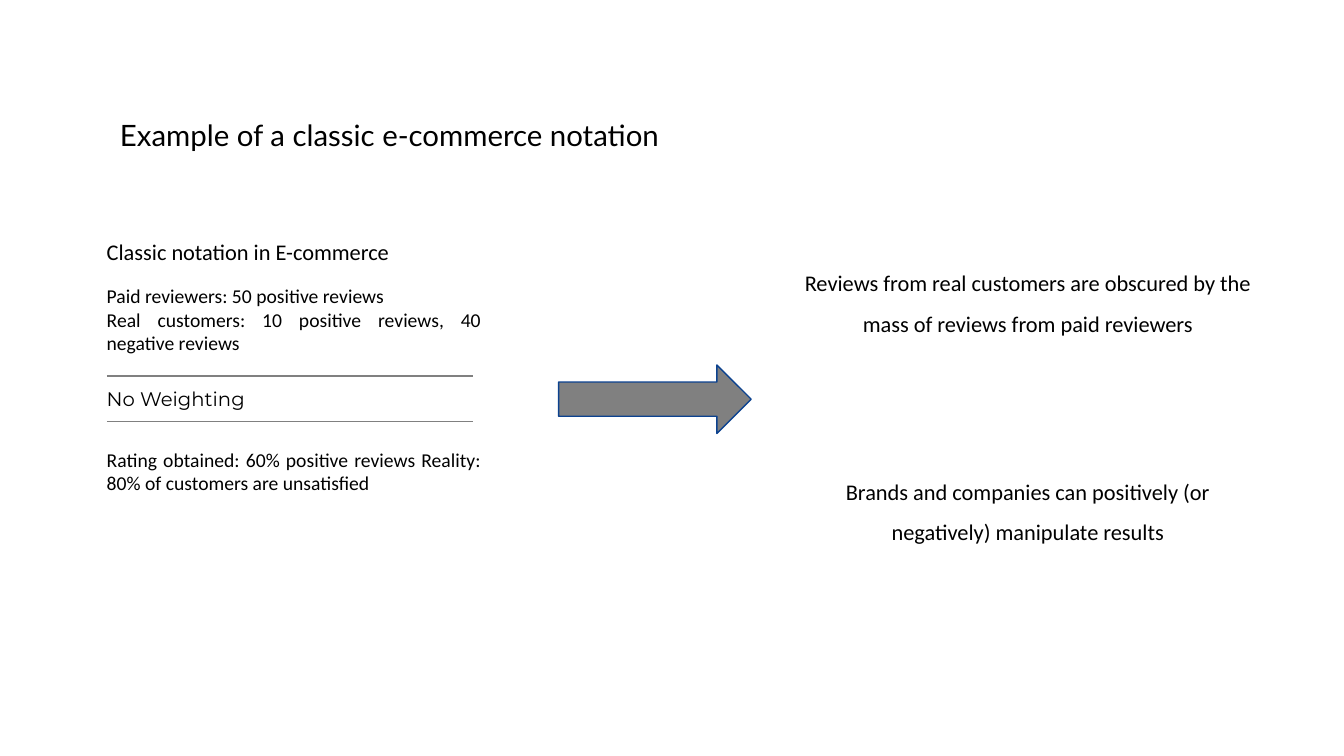
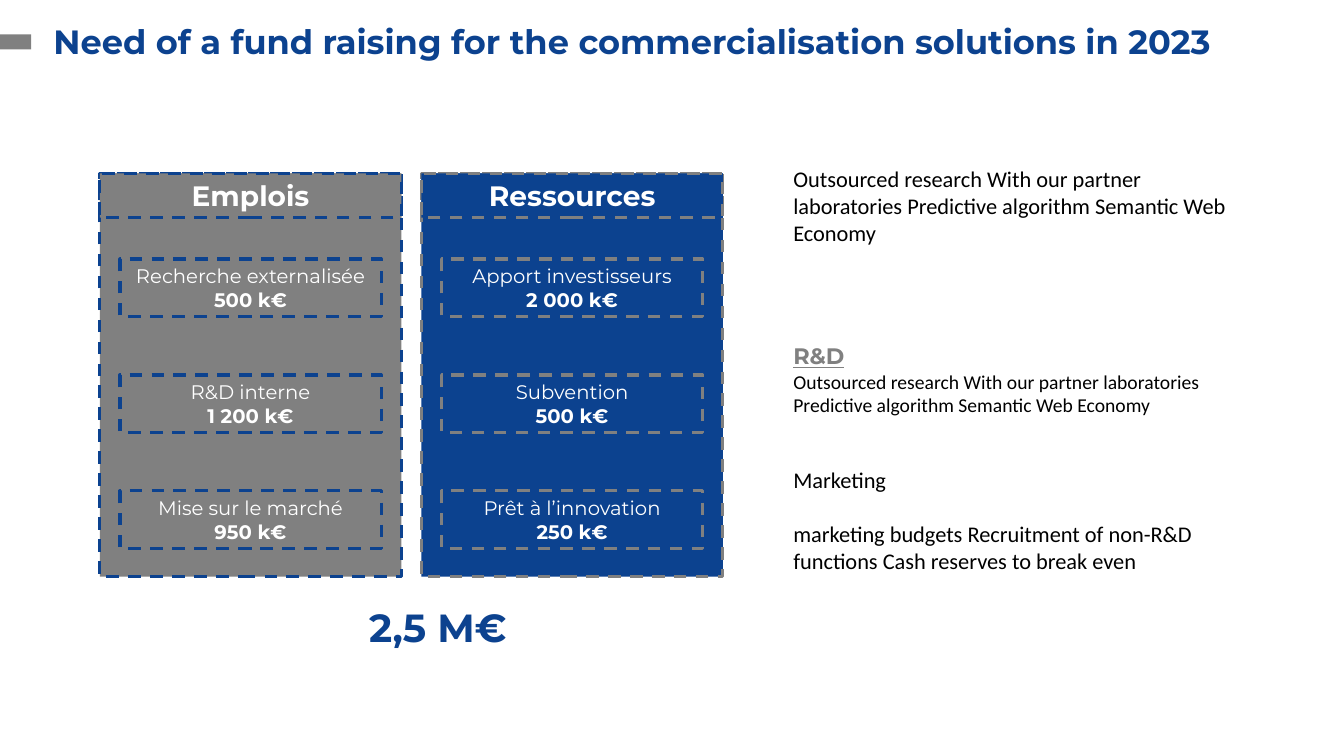
"""Build two slides: a classic e-commerce rating example and a fund-raising plan."""
from dataclasses import dataclass

from lxml import etree
from pptx import Presentation
from pptx.dml.color import RGBColor
from pptx.enum import dml, shapes, text
from pptx.oxml import ns
from pptx.util import Inches, Pt


@dataclass(frozen=True)
class Theme:
    blue: str = "0C428F"
    grey: str = "808080"
    black: str = "000000"
    white: str = "FFFFFF"
    plain: str = "Calibri"
    brand: str = "Montserrat"
    light: str = "Lato"
    small: int = 14
    body: int = 16
    header: int = 20
    lead: int = 21
    title: int = 24
    total: int = 28


@dataclass(frozen=True)
class Style:
    size: int
    font: str = Theme.plain
    color: str = Theme.black
    bold: bool = False
    underline: bool = False


THEME = Theme()
SMALL, BODY = Style(THEME.small), Style(THEME.body)
BRAND = Style(THEME.small, THEME.brand)
LEAD = Style(THEME.lead, THEME.light)
TITLE = Style(THEME.title, THEME.brand, THEME.blue, bold=True)
TOTAL = Style(THEME.total, THEME.brand, THEME.blue, bold=True)
HEADER = Style(THEME.header, THEME.brand, THEME.white, bold=True)
LABEL = Style(THEME.small, THEME.brand, THEME.white)
AMOUNT = Style(THEME.small, THEME.brand, THEME.white, bold=True)
TOPIC = Style(THEME.body, THEME.brand, THEME.grey, bold=True, underline=True)

LEFT, CENTER, JUSTIFY = text.PP_ALIGN.LEFT, text.PP_ALIGN.CENTER, text.PP_ALIGN.JUSTIFY

NOTATION_TITLE = "Example of a classic e-commerce notation"
NOTATION = [
    (2.31, 0.37, LEFT, [("Classic notation in E-commerce", BODY)]),
    (2.77, 0.81, JUSTIFY, [
        ("Paid reviewers: 50 positive reviews", SMALL),
        ("Real customers: 10 positive reviews, 40 negative reviews", SMALL)]),
    (3.79, 0.34, JUSTIFY, [("No Weighting", BRAND)]),
    (4.39, 0.57, JUSTIFY, [
        ("Rating obtained: 60% positive reviews Reality: 80% of customers are unsatisfied",
         SMALL)]),
]
RULES = (3.73, 4.18)
CONSEQUENCES = [
    (2.49, "Reviews from real customers are obscured by the mass of reviews from paid reviewers"),
    (4.56, "Brands and companies can positively (or negatively) manipulate results"),
]

FUNDING_TITLE = "Need of a fund raising for the commercialisation solutions in 2023"
FUNDING = [
    ("Emplois", THEME.grey, THEME.blue, [
        ("Recherche externalisée", "500 k€"),
        ("R&D interne", "1 200 k€"),
        ("Mise sur le marché", "950 k€")]),
    ("Ressources", THEME.blue, THEME.grey, [
        ("Apport investisseurs", "2 000 k€"),
        ("Subvention", "500 k€"),
        ("Prêt à l’innovation", "250 k€")]),
]
FUNDING_TOTAL = "2,5 M€"
RESEARCH = ("Outsourced research With our partner laboratories "
            "Predictive algorithm Semantic Web Economy")
USES = [
    (1.59, 4.53, 0.91, 0, [(RESEARCH, BODY)]),
    (3.35, 4.53, 0.84, 0, [("R&D", TOPIC), (RESEARCH, SMALL)]),
    (4.57, 4.85, 1.18, 19.5, [
        ("Marketing", BODY),
        ("marketing budgets Recruitment of non-R&D functions Cash reserves to break even",
         BODY)]),
]


def rgb(color):
    return RGBColor.from_string(color)


def inches(box):
    return [Inches(length) for length in box]


def write(frame, lines, align=LEFT, spacing=None, gap=0):
    frame.word_wrap = True
    frame.text = "\n".join(line for line, _ in lines)
    for paragraph, (_, style) in zip(frame.paragraphs, lines):
        paragraph.alignment = align
        paragraph.space_before = Pt(0)
        paragraph.space_after = Pt(gap)
        if spacing:
            paragraph.line_spacing = spacing
        for run in paragraph.runs:
            font = run.font
            font.size, font.name = Pt(style.size), style.font
            font.bold, font.underline = style.bold, style.underline
            font.color.rgb = rgb(style.color)


def add_text(slide, box, lines, **layout):
    write(slide.shapes.add_textbox(*inches(box)).text_frame, lines, **layout)


def add_block(slide, box, fill, line=None, width=1, dashed=False, lines=(),
              kind=shapes.MSO_SHAPE.RECTANGLE):
    block = slide.shapes.add_shape(kind, *inches(box))
    block.shadow.inherit = False
    block.fill.solid()
    block.fill.fore_color.rgb = rgb(fill)
    if line:
        block.line.color.rgb = rgb(line)
        block.line.width = Pt(width)
        if dashed:
            block.line.dash_style = dml.MSO_LINE.DASH
    else:
        block.line.fill.background()
    if lines:
        write(block.text_frame, lines, align=CENTER)


def add_rule(slide, left, right, top):
    rule = slide.shapes.add_connector(
        shapes.MSO_CONNECTOR.STRAIGHT, *inches((left, top, right, top)))
    rule.line.color.rgb = rgb(THEME.grey)
    rule.line.width = Pt(1)
    etree.SubElement(rule._element.spPr, ns.qn("a:effectLst"))


def add_slide(deck, heading, style, box):
    slide = deck.slides.add_slide(deck.slide_layouts[5])
    title = slide.shapes.title
    title.left, title.top, title.width, title.height = inches(box)
    write(title.text_frame, [(heading, style)])
    title.text_frame.auto_size = text.MSO_AUTO_SIZE.NONE
    title.text_frame.vertical_anchor = text.MSO_ANCHOR.MIDDLE
    return slide


def build_notation(deck):
    slide = add_slide(deck, NOTATION_TITLE, LEAD, (1.09, 1.09, 11, 0.5))
    for top, height, align, lines in NOTATION:
        add_text(slide, (0.96, top, 3.91, height), lines, align=align)
    for top in RULES:
        add_rule(slide, 1.06, 4.69, top)
    add_block(slide, (5.54, 3.62, 1.91, 0.68), THEME.grey, THEME.blue,
              kind=shapes.MSO_SHAPE.RIGHT_ARROW)
    for top, consequence in CONSEQUENCES:
        add_text(slide, (7.86, top, 4.67, 0.87), [(consequence, BODY)],
                 align=CENTER, spacing=1.5)


def build_funding(deck):
    slide = add_slide(deck, FUNDING_TITLE, TITLE, (0.43, 0.16, 12.38, 0.5))
    add_block(slide, (0, 0.34, 0.31, 0.15), THEME.grey)
    top, width, pitch, inset = 1.72, 2.99, 3.19, 0.2
    for column, (header, fill, line, items) in enumerate(FUNDING):
        left = 0.99 + column * pitch
        border = dict(fill=fill, line=line, width=2.25, dashed=True)
        add_block(slide, (left, top, width, 4), **border)
        add_block(slide, (left, top, width, 0.44), lines=[(header, HEADER)], **border)
        for row, (label, amount) in enumerate(items):
            add_block(slide, (left + inset, 2.57 + row * 1.15, width - 2 * inset, 0.57),
                      lines=[(label, LABEL), (amount, AMOUNT)], **border)
    add_text(slide, (3.16, 5.94, 2.37, 0.57), [(FUNDING_TOTAL, TOTAL)], align=CENTER)
    for use_top, use_width, height, gap, lines in USES:
        add_text(slide, (7.77, use_top, use_width, height), lines, gap=gap)


def main():
    deck = Presentation()
    deck.slide_width, deck.slide_height = Inches(13.33), Inches(7.5)
    build_notation(deck)
    build_funding(deck)
    deck.save("out.pptx")


if __name__ == "__main__":
    main()
